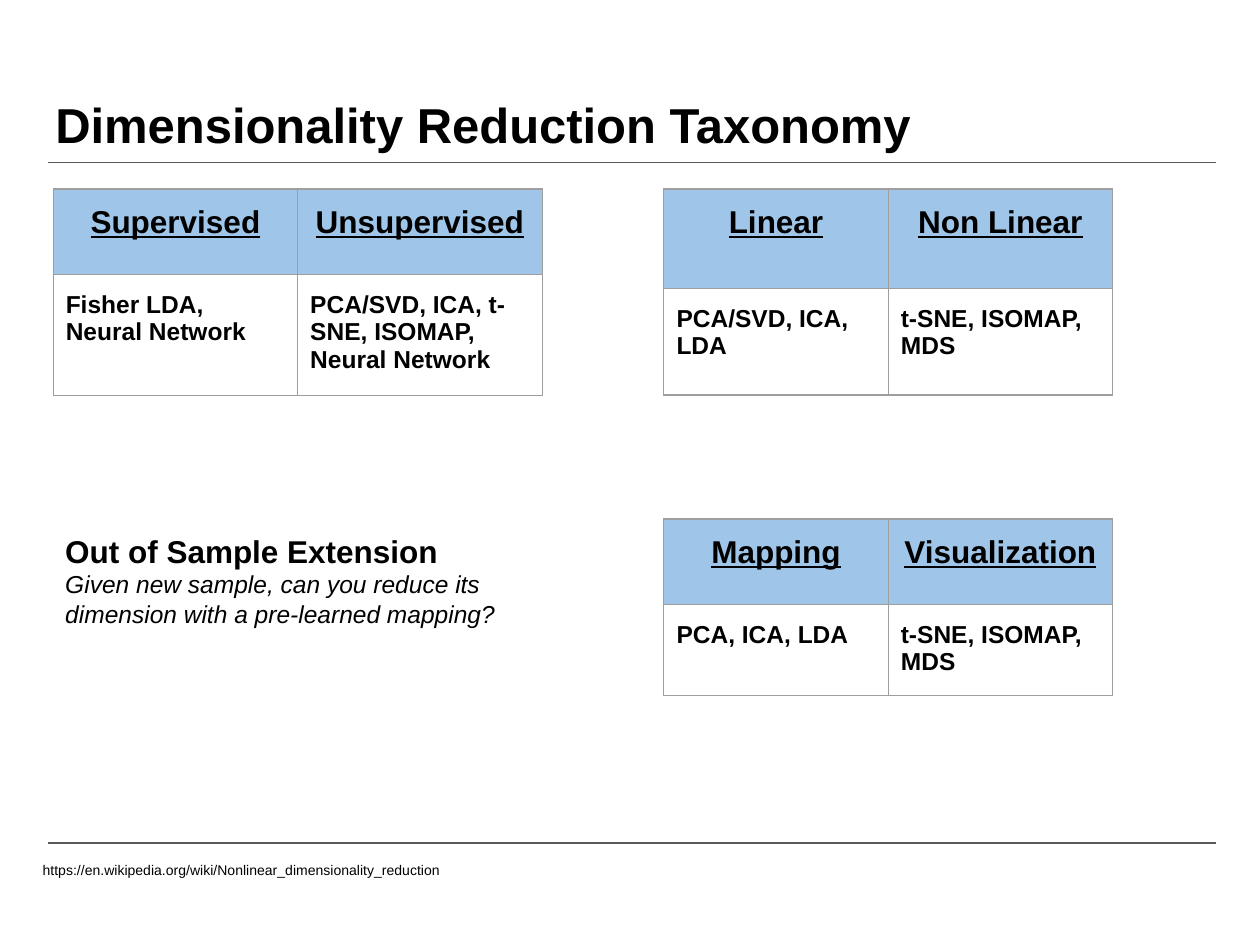
from lxml import etree
from pptx import Presentation
from pptx import util as u
from pptx.dml.color import RGBColor
from pptx.enum import shapes, text
from pptx.oxml import ns

Pt = u.Pt
hue = RGBColor.from_string

HEAD = {"size": Pt(18), "bold": True, "underline": True}
BODY = {"size": Pt(14), "bold": True, "underline": False}
GREY, BLUE = "9E9E9E", "9FC5E8"


def write(para, words, form):
    run = para.add_run()
    run.text = words
    run.font.name = "Arial"
    run.font.color.rgb = hue("000000")
    for key, val in form.items():
        setattr(run.font, key, val)


def edge(cell):
    props = cell._tc.get_or_add_tcPr()
    for side in ("lnL", "lnR", "lnT", "lnB"):
        line = etree.SubElement(props, ns.qn(f"a:{side}"), w=str(Pt(0.75)))
        fill = etree.SubElement(line, ns.qn("a:solidFill"))
        etree.SubElement(fill, ns.qn("a:srgbClr"), val=GREY)


deck = Presentation()
deck.slide_width, deck.slide_height = Pt(720), Pt(540)
slide = deck.slides.add_slide(deck.slide_layouts[6])

# Rules under the title and above the footer
for y in (92.9, 481.7):
    rule = slide.shapes.add_connector(
        shapes.MSO_CONNECTOR.STRAIGHT, Pt(27.4), Pt(y), Pt(694.8), Pt(y))
    rule.line.color.rgb = hue("595959")
    rule.line.width = Pt(0.75)
    etree.SubElement(rule._element.spPr, ns.qn("a:effectLst"))

# Title, question and source link
top, mid = text.MSO_ANCHOR.TOP, text.MSO_ANCHOR.MIDDLE
notes = [
    ((24.5, 46.8, 671, 59.8), top,
     [("Dimensionality Reduction Taxonomy", {"size": Pt(28), "bold": True})]),
    ((30.2, 296.6, 293.8, 50.4), top,
     [("Out of Sample Extension", {"size": Pt(18), "bold": True}),
      ("Given new sample, can you reduce its dimension with a pre-learned mapping?",
       {"size": Pt(14), "italic": True})]),
    ((17.3, 486, 251.3, 22.3), mid,
     [("https://en.wikipedia.org/wiki/Nonlinear_dimensionality_reduction",
       {"size": Pt(8)})]),
]
for place, anchor, lines in notes:
    frame = slide.shapes.add_textbox(*map(Pt, place)).text_frame
    frame.word_wrap = True
    frame.vertical_anchor = anchor
    for side in ("left", "right", "top", "bottom"):
        setattr(frame, f"margin_{side}", Pt(7.2))
    for i, (words, form) in enumerate(lines):
        para = frame.add_paragraph() if i else frame.paragraphs[0]
        write(para, words, form)

# Taxonomy tables: left, top, column width, row heights, rows of text
grids = [
    (379.4, 108, 128.2, (57, 60.8),
     [("Linear", "Non Linear"), ("PCA/SVD, ICA, LDA", "t-SNE, ISOMAP, MDS")]),
    (30.4, 108, 139.7, (49, 46.8),
     [("Supervised", "Unsupervised"),
      ("Fisher LDA, Neural Network",
       "PCA/SVD, ICA, t-SNE, ISOMAP, Neural Network")]),
    (379.4, 296.6, 128.2, (49, 47.5),
     [("Mapping", "Visualization"), ("PCA, ICA, LDA", "t-SNE, ISOMAP, MDS")]),
]
for left, y, wide, highs, rows in grids:
    table = slide.shapes.add_table(
        2, 2, Pt(left), Pt(y), Pt(2 * wide), Pt(sum(highs))).table
    table.horz_banding = table.first_row = False
    for col in table.columns:
        col.width = Pt(wide)
    for r, row in enumerate(rows):
        table.rows[r].height = Pt(highs[r])
        for c, words in enumerate(row):
            cell = table.cell(r, c)
            cell.margin_left = cell.margin_right = Pt(7.2)
            cell.margin_top = cell.margin_bottom = Pt(9.2)
            edge(cell)
            para = cell.text_frame.paragraphs[0]
            if r == 0:
                cell.fill.solid()
                cell.fill.fore_color.rgb = hue(BLUE)
                para.alignment = text.PP_ALIGN.CENTER
            else:
                cell.fill.background()
            write(para, words, BODY if r else HEAD)

deck.save("out.pptx")
